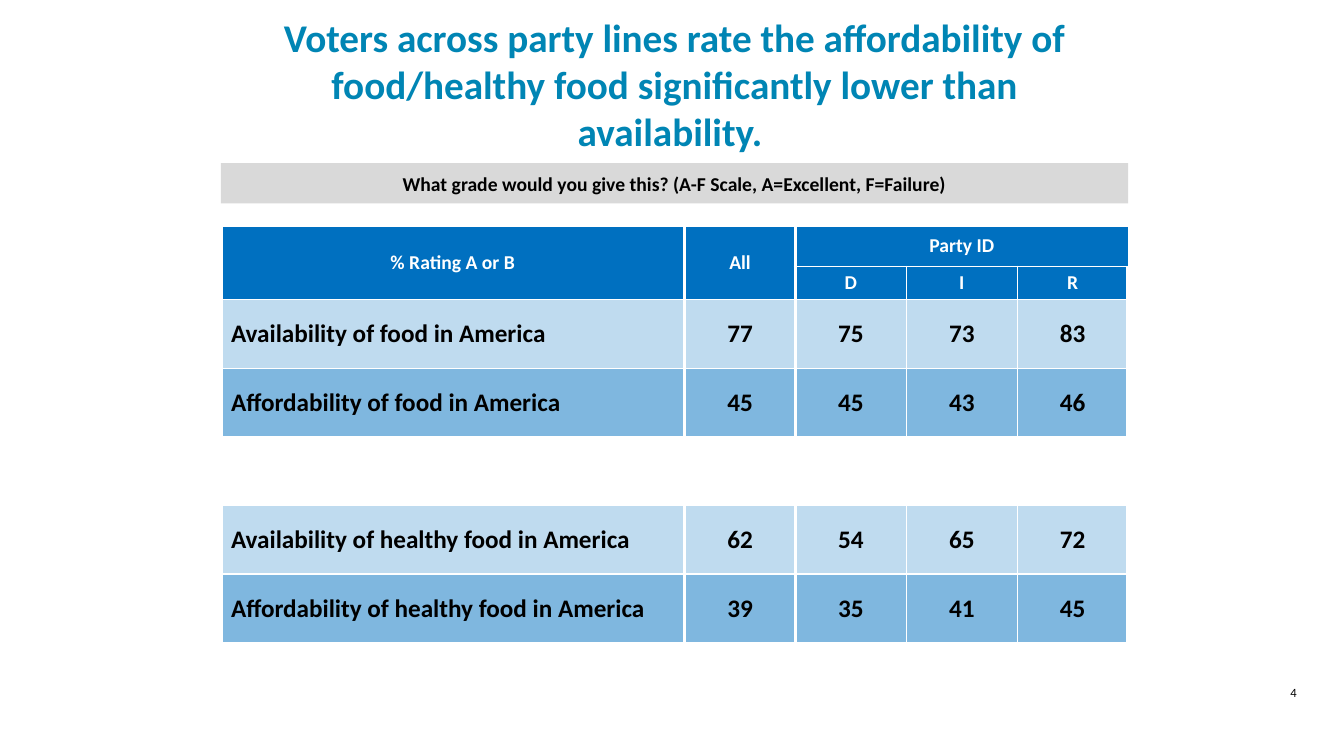
from lxml import etree
from pptx import Presentation
from pptx.dml.color import RGBColor
from pptx.enum.shapes import MSO_SHAPE
from pptx.enum.text import MSO_ANCHOR, PP_ALIGN
from pptx.oxml.ns import qn
from pptx.util import Pt

LEFT, CENTER = PP_ALIGN.LEFT, PP_ALIGN.CENTER
TOP, MIDDLE = MSO_ANCHOR.TOP, MSO_ANCHOR.MIDDLE
RECT = MSO_SHAPE.RECTANGLE

TITLE = ("Voters across party lines rate the affordability of "
         "food/healthy food significantly lower than availability. ")
ASK = "What grade would you give this? (A-F Scale, A=Excellent, F=Failure)"
PAGE = "4"
ROWS = [
    ("head", ["% Rating A or B", "All", "Party ID", "", ""]),
    ("head", ["", "", "D", "I", "R"]),
    ("light", ["Availability of food in America", "77", "75", "73", "83"]),
    ("mid", ["Affordability of food in America", "45", "45", "43", "46"]),
    (None, [""] * 5),
    ("light", ["Availability of healthy food in America", "62", "54", "65", "72"]),
    ("mid", ["Affordability of healthy food in America", "39", "35", "41", "45"]),
]
MERGES = [((0, 0), (1, 0)), ((0, 1), (1, 1)), ((0, 2), (0, 4))]

THEME = {
    "font": "Calibri",
    "color": {"title": "0085B4", "bar": "D9D9D9", "head": "0070C0",
              "light": "BFDBEF", "mid": "7FB7DF", "white": "FFFFFF", "black": "000000"},
    "size": {"title": 28, "head": 14, "body": 18, "page": 9},
}

X, WIDE = 157.8, 648
COLS = [331.2] + [79.2] * 4
HIGH = [29.5, 23] + [49] * 5
THICK, THIN = 3, 1


def tint(name):
    return RGBColor.from_string(THEME["color"][name])


def write(frame, text, size="body", color="black", bold=True, align=CENTER):
    para = frame.paragraphs[0]
    para.alignment = align
    run = para.add_run()
    run.text = text
    font = run.font
    font.name, font.size, font.bold = THEME["font"], Pt(THEME["size"][size]), bold
    font.color.rgb = tint(color)


def label(slide, box, text, anchor=MIDDLE, **form):
    frame = slide.shapes.add_textbox(*map(Pt, box)).text_frame
    frame.word_wrap, frame.vertical_anchor = True, anchor
    write(frame, text, **form)


def edge(cell, side, width):
    line = etree.SubElement(cell._tc.get_or_add_tcPr(), qn("a:ln" + side), w=str(Pt(width)))
    fill = etree.SubElement(line, qn("a:solidFill"))
    etree.SubElement(fill, qn("a:srgbClr"), val=THEME["color"]["white"])


def style(cell, row, col, tone):
    edge(cell, "L", THICK if col < 3 else THIN)
    edge(cell, "R", THICK if col in (0, 1, 4) else THIN)
    edge(cell, "T", THICK if row == 0 else THIN)
    edge(cell, "B", THIN)
    if tone:
        cell.fill.solid()
        cell.fill.fore_color.rgb = tint(tone)
    else:
        cell.fill.background()
    cell.vertical_anchor = MIDDLE
    if col:
        cell.margin_left = cell.margin_right = cell.margin_top = cell.margin_bottom = 0


def grid(slide):
    box = map(Pt, (X, 160.6, WIDE, sum(HIGH)))
    table = slide.shapes.add_table(len(ROWS), len(COLS), *box).table
    for part, size in zip(table.columns, COLS):
        part.width = Pt(size)
    for part, size in zip(table.rows, HIGH):
        part.height = Pt(size)
    for start, end in MERGES:
        table.cell(*start).merge(table.cell(*end))
    for row, (tone, texts) in enumerate(ROWS):
        head = tone == "head"
        for col, text in enumerate(texts):
            cell = table.cell(row, col)
            style(cell, row, col, tone)
            if text:
                write(cell.text_frame, text, size="head" if head else "body",
                      color="white" if head else "black",
                      align=CENTER if head or col else LEFT)


def main():
    deck = Presentation()
    deck.slide_width, deck.slide_height = Pt(960), Pt(540)
    slide = deck.slides.add_slide(deck.slide_layouts[6])
    label(slide, (165.6, 18, 632.2, 83.5), TITLE, size="title", color="title")
    label(slide, (888, 486, 72, 24), PAGE, anchor=TOP, size="page", bold=False)
    bar = slide.shapes.add_shape(RECT, *map(Pt, (X, 116.6, WIDE, 28.8)))
    bar.shadow.inherit = False
    bar.fill.solid()
    bar.fill.fore_color.rgb = tint("bar")
    bar.line.fill.background()
    bar.text_frame.vertical_anchor = MIDDLE
    write(bar.text_frame, ASK, size="head")
    grid(slide)
    deck.save("out.pptx")


if __name__ == "__main__":
    main()
